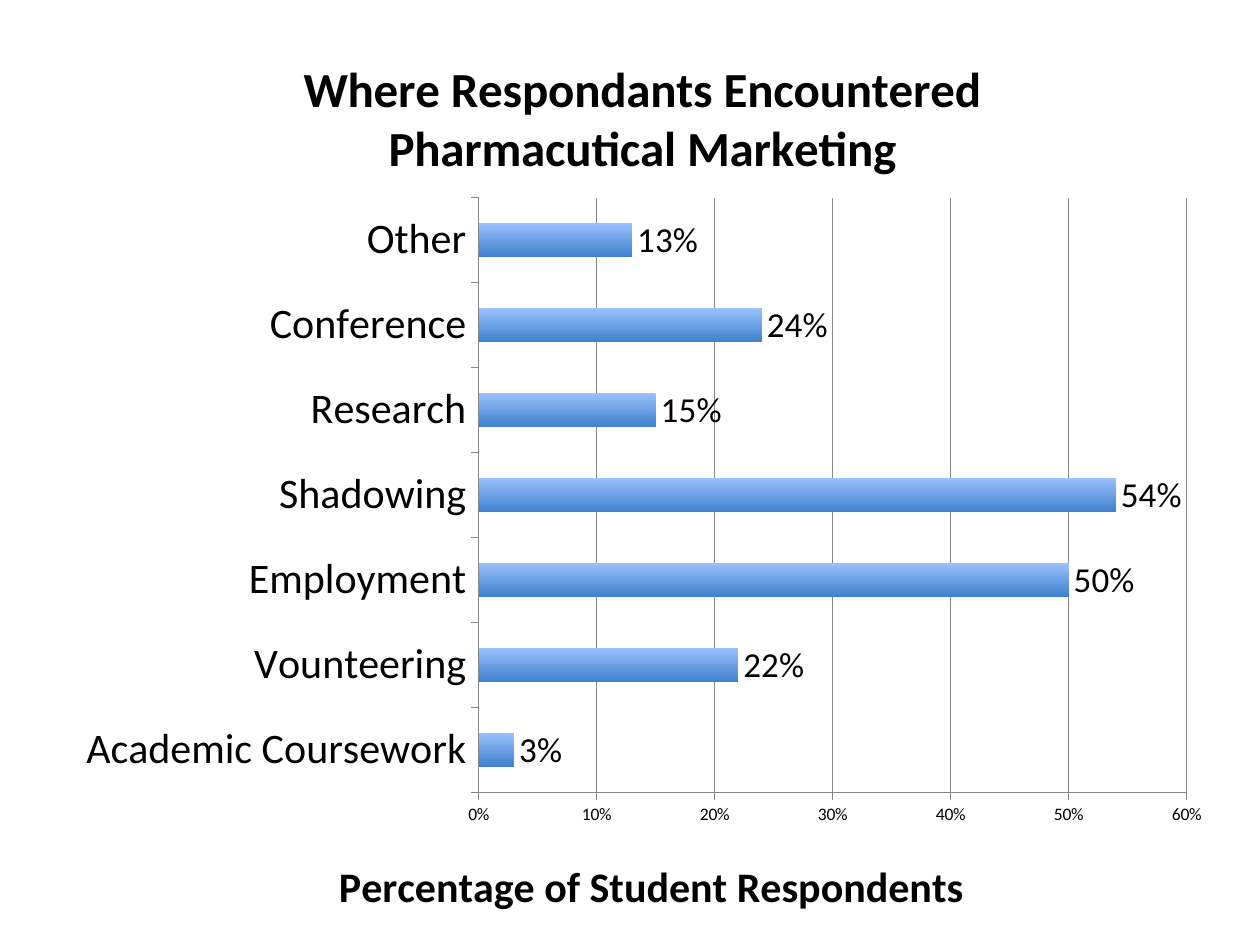
"""Build a slide with a bar chart of where students met marketing."""
import pptx
import pptx.chart.data
import pptx.dml.color
import pptx.enum.chart
import pptx.oxml
import pptx.oxml.ns
import pptx.util

HEADING = "Where Respondants Encountered\nPharmacutical Marketing"
AXIS_CAPTION = "Percentage of Student Respondents"
SHARES = {
    "Academic Coursework": 0.03,
    "Vounteering": 0.22,
    "Employment": 0.50,
    "Shadowing": 0.54,
    "Research": 0.15,
    "Conference": 0.24,
    "Other": 0.13,
}
CHART_BOX = (0.5, 0.2, 9.22, 7.18)
PLOT_BOX = (3.8, 1.57, 5.62, 4.72)
HEADING_AT = (2.38, 0.44)
CAPTION_AT = (2.63, 6.75)
BAR_GRADIENT = ("9BC1FF", "3F80CD")
LINE_COLOR = "868686"


def rgb(value):
    return pptx.dml.color.RGBColor.from_string(value)


def style(target, formats):
    for name, value in formats.items():
        setattr(target, name, value)


def set_font(font, size, bold=False):
    style(font, {"name": "Calibri", "size": pptx.util.Pt(size), "bold": bold})
    font.color.rgb = rgb("000000")


def set_line(line):
    line.color.rgb = rgb(LINE_COLOR)
    line.width = pptx.util.Pt(0.75)


def place(element, box, inner=False):
    """Fix a chart part at a box given in slide inches."""
    left, top, width, height = CHART_BOX
    fractions = [(box[0] - left) / width, (box[1] - top) / height]
    fractions += [part / whole for part, whole in zip(box[2:], (width, height))]
    names = ("x", "y", "w", "h")[:len(box)]
    parts = '<c:layoutTarget val="inner"/>' if inner else ""
    parts += "".join(f'<c:{name}Mode val="edge"/>' for name in names[:2])
    parts += "".join(f'<c:{name} val="{value:.4f}"/>' for name, value in zip(names, fractions))
    layout = pptx.oxml.parse_xml(
        f'<c:layout {pptx.oxml.ns.nsdecls("c")}><c:manualLayout>{parts}</c:manualLayout></c:layout>')
    for old in element.findall(pptx.oxml.ns.qn("c:layout")):
        element.remove(old)
    element.insert(len(element.findall(pptx.oxml.ns.qn("c:tx"))), layout)


def add_title(owner, text, size, position):
    owner.has_title = True
    title = getattr(owner, "chart_title", None) or owner.axis_title
    title.text_frame.text = text
    for paragraph in title.text_frame.paragraphs:
        set_font(paragraph.runs[0].font, size, bold=True)
    place(title._element, position)


def main():
    deck = pptx.Presentation()
    deck.slide_width, deck.slide_height = pptx.util.Inches(10), pptx.util.Inches(7.5)
    slide = deck.slides.add_slide(deck.slide_layouts[6])

    survey = pptx.chart.data.CategoryChartData(number_format="0%")
    survey.categories = list(SHARES)
    survey.add_series("Series 1", list(SHARES.values()))
    chart = slide.shapes.add_chart(
        pptx.enum.chart.XL_CHART_TYPE.BAR_CLUSTERED,
        *map(pptx.util.Inches, CHART_BOX), survey).chart
    chart.has_legend = False
    set_font(chart.font, 10)
    add_title(chart, HEADING, 28, HEADING_AT)
    add_title(chart.value_axis, AXIS_CAPTION, 24, CAPTION_AT)
    place(chart._chartSpace.chart.plotArea, PLOT_BOX, inner=True)

    outside = pptx.enum.chart.XL_TICK_MARK.OUTSIDE
    for axis, size in ((chart.category_axis, 24), (chart.value_axis, 10)):
        style(axis, {"major_tick_mark": outside,
                     "minor_tick_mark": pptx.enum.chart.XL_TICK_MARK.NONE})
        set_font(axis.tick_labels.font, size)
        set_line(axis.format.line)
    style(chart.value_axis, {"minimum_scale": 0, "maximum_scale": 0.6,
                             "major_unit": 0.1, "has_major_gridlines": True})
    set_line(chart.value_axis.major_gridlines.format.line)
    percent = {"number_format": "0%", "number_format_is_linked": False}
    style(chart.value_axis.tick_labels, percent)

    plot = chart.plots[0]
    style(plot, {"gap_width": 150, "vary_by_categories": False, "has_data_labels": True})
    style(plot.data_labels, {
        **percent, "show_value": True,
        "position": pptx.enum.chart.XL_LABEL_POSITION.OUTSIDE_END})
    set_font(plot.data_labels.font, 20)
    bars = plot.series[0]
    bars.invert_if_negative = False
    fill = bars.format.fill
    fill.gradient()
    fill.gradient_angle = 270
    for stop, color in zip(fill.gradient_stops, BAR_GRADIENT):
        stop.color.rgb = rgb(color)

    deck.save("out.pptx")


if __name__ == "__main__":
    main()
